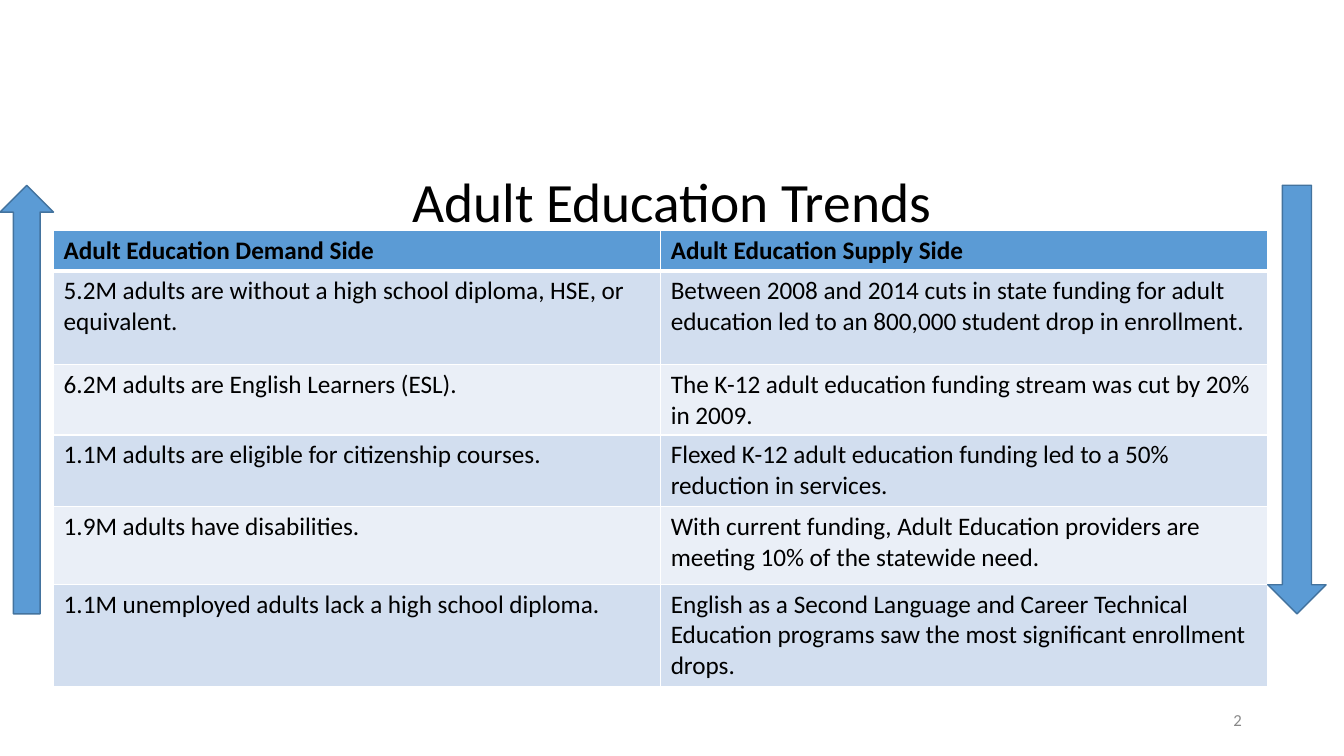
from dataclasses import dataclass

from lxml import etree
from pptx import Presentation
from pptx import util as u
from pptx.dml.color import RGBColor
from pptx.enum import shapes, text
from pptx.oxml import ns

FONT = "Calibri"
COLOURS = {
    "text": "000000",
    "number": "898989",
    "header": "5B9BD5",
    "outline": "43739E",
    "band_dark": "D2DEEF",
    "band_light": "EAEFF7",
    "border": "FFFFFF",
}


@dataclass(frozen=True)
class Box:
    """A rectangle in centimetres."""
    left: float
    top: float
    width: float
    height: float

    def lengths(self) -> tuple:
        return tuple(u.Cm(n) for n in (self.left, self.top, self.width, self.height))


@dataclass(frozen=True)
class Label:
    wording: str
    box: Box
    size: float
    colour: str
    alignment: text.PP_ALIGN
    line_spacing: float = 1.0


@dataclass(frozen=True)
class Arrow:
    preset: shapes.MSO_SHAPE
    box: Box


@dataclass(frozen=True)
class TrendRow:
    demand: str
    supply: str
    height: float


LABELS = [
    Label("2", Box(24.59, 17.75, 6.96, 0.76), 12, "number", text.PP_ALIGN.RIGHT),
    Label("Adult Education Trends", Box(9.73, 3.96, 14.4, 2.41), 39.6, "text",
          text.PP_ALIGN.CENTER, 0.9),
]
ARROWS = [
    Arrow(shapes.MSO_SHAPE.UP_ARROW, Box(0, 4.67, 1.35, 10.8)),
    Arrow(shapes.MSO_SHAPE.DOWN_ARROW, Box(31.95, 4.67, 1.47, 10.8)),
]
TABLE_BOX = Box(1.35, 5.8, 30.6, 11.5)
TRENDS = [
    TrendRow("Adult Education Demand Side", "Adult Education Supply Side", 1.02),
    TrendRow("5.2M adults are without a high school diploma, HSE, or equivalent.",
             "Between 2008 and 2014 cuts in state funding for adult education led to "
             "an 800,000 student drop in enrollment.", 2.36),
    TrendRow("6.2M adults are English Learners (ESL).",
             "The K-12 adult education funding stream was cut by 20% in 2009.", 1.75),
    TrendRow("1.1M adults are eligible for citizenship courses.",
             "Flexed K-12 adult education funding led to a 50% reduction in services.",
             1.8),
    TrendRow("1.9M adults have disabilities.",
             "With current funding, Adult Education providers are meeting 10% of the "
             "statewide need.", 1.96),
    TrendRow("1.1M unemployed adults lack a high school diploma.",
             "English as a Second Language and Career Technical Education programs saw "
             "the most significant enrollment drops.", 2.59),
]


def colour(name: str) -> RGBColor:
    return RGBColor.from_string(COLOURS[name])


def style_font(font, size: float, name: str, bold: bool = False) -> None:
    font.name = FONT
    font.size = u.Pt(size)
    font.bold = bold
    font.color.rgb = colour(name)


def add_label(slide, label: Label) -> None:
    frame = slide.shapes.add_textbox(*label.box.lengths()).text_frame
    frame.word_wrap = True
    frame.vertical_anchor = text.MSO_ANCHOR.MIDDLE
    paragraph = frame.paragraphs[0]
    paragraph.text = label.wording
    paragraph.alignment = label.alignment
    paragraph.line_spacing = label.line_spacing
    style_font(paragraph.font, label.size, label.colour)


def add_arrow(slide, arrow: Arrow) -> None:
    shape = slide.shapes.add_shape(arrow.preset, *arrow.box.lengths())
    shape.shadow.inherit = False
    shape.fill.solid()
    shape.fill.fore_color.rgb = colour("header")
    shape.line.color.rgb = colour("outline")
    shape.line.width = u.Pt(1)


def set_borders(cell, widths: dict[str, float]) -> None:
    """Draw cell borders; must run before the cell's fill is set."""
    properties = cell._tc.get_or_add_tcPr()
    for side, width in widths.items():
        line = etree.SubElement(properties, ns.qn(f"a:ln{side}"), w=str(u.Pt(width)))
        fill = etree.SubElement(line, ns.qn("a:solidFill"))
        etree.SubElement(fill, ns.qn("a:srgbClr"), val=COLOURS["border"])


def add_trend_table(slide) -> None:
    frame = slide.shapes.add_table(len(TRENDS), 2, *TABLE_BOX.lengths())
    table = frame.table
    for column in table.columns:
        column.width = u.Cm(TABLE_BOX.width / 2)
    for index, trend in enumerate(TRENDS):
        header = index == 0
        band = "header" if header else "band_dark" if index % 2 else "band_light"
        widths = {"L": 1, "R": 1, "T": 3 if index == 1 else 1, "B": 3 if header else 1}
        table.rows[index].height = u.Cm(trend.height)
        for cell, wording in zip(table.rows[index].cells, (trend.demand, trend.supply)):
            set_borders(cell, widths)
            cell.fill.solid()
            cell.fill.fore_color.rgb = colour(band)
            cell.text = wording
            style_font(cell.text_frame.paragraphs[0].font, 18, "text", header)


def main() -> None:
    presentation = Presentation()
    presentation.slide_width = u.Cm(33.87)
    presentation.slide_height = u.Cm(19.05)
    slide = presentation.slides.add_slide(presentation.slide_layouts[6])
    for label in LABELS:
        add_label(slide, label)
    add_trend_table(slide)
    for arrow in ARROWS:
        add_arrow(slide, arrow)
    presentation.save("out.pptx")


if __name__ == "__main__":
    main()
